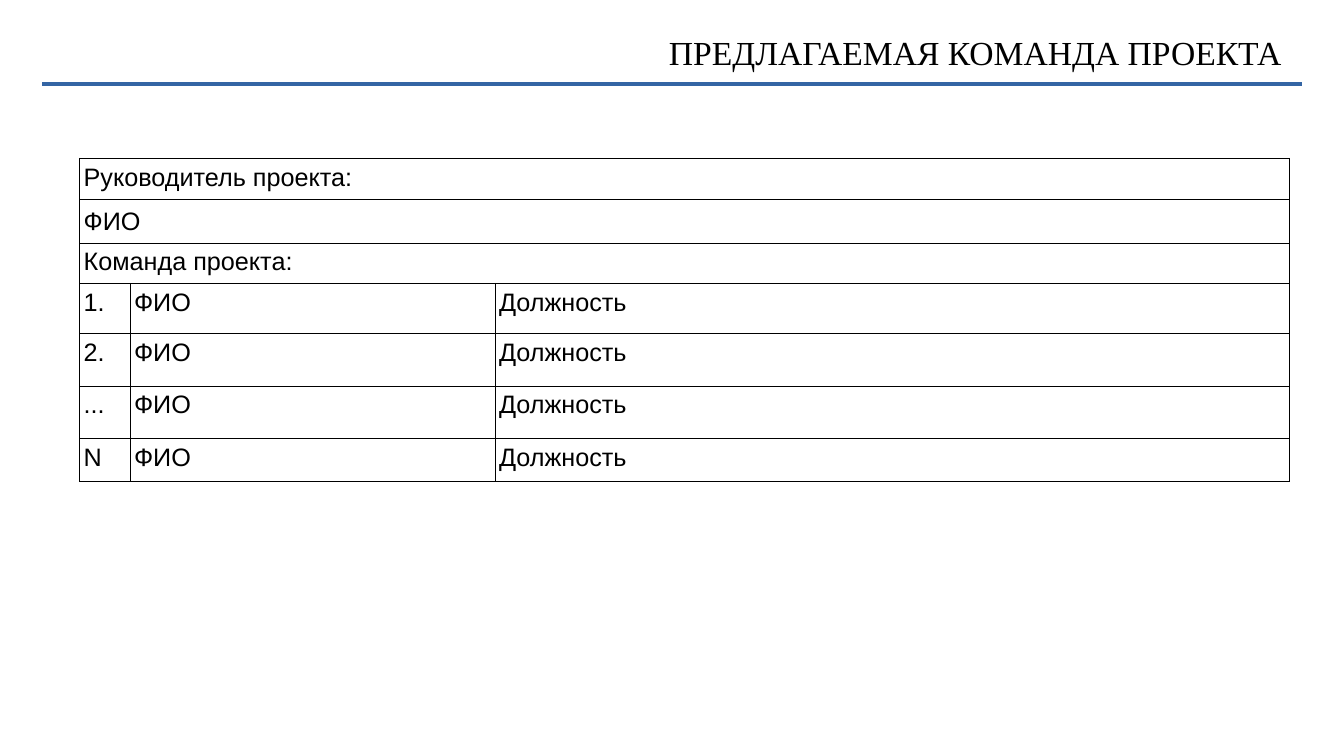
from lxml import etree
from pptx import Presentation
from pptx.dml.color import RGBColor
from pptx.enum.shapes import MSO_CONNECTOR
from pptx.enum.text import MSO_ANCHOR, PP_ALIGN
from pptx.oxml.ns import qn
from pptx.util import Inches, Pt

LEFT, RIGHT, JUSTIFY = PP_ALIGN.LEFT, PP_ALIGN.RIGHT, PP_ALIGN.JUSTIFY
TOP, MIDDLE = MSO_ANCHOR.TOP, MSO_ANCHOR.MIDDLE
STRAIGHT = MSO_CONNECTOR.STRAIGHT
COLORS = {"text": "000000", "border": "000000", "rule": "3465A4"}
BORDER_WIDTH = Pt(0.57)


def write_text(frame, text, font="Arial", size=18, align=LEFT):
    paragraph = frame.paragraphs[0]
    paragraph.alignment = align
    run = paragraph.add_run()
    run.text = text
    run.font.name = font
    run.font.size = Pt(size)
    run.font.color.rgb = RGBColor.from_string(COLORS["text"])


def add_borders(cell):
    properties = cell._tc.get_or_add_tcPr()
    for position, side in enumerate(("a:lnL", "a:lnR", "a:lnT", "a:lnB")):
        line = etree.Element(qn(side), w=str(BORDER_WIDTH))
        fill = etree.SubElement(line, qn("a:solidFill"))
        etree.SubElement(fill, qn("a:srgbClr"), val=COLORS["border"])
        properties.insert(position, line)


presentation = Presentation()
presentation.slide_width = Inches(13.33)
presentation.slide_height = Inches(7.5)
slide = presentation.slides.add_slide(presentation.slide_layouts[6])

# Heading with its rule
rule = slide.shapes.add_connector(
    STRAIGHT, Inches(0.42), Inches(0.83), Inches(12.91), Inches(0.83)
)
rule.line.color.rgb = RGBColor.from_string(COLORS["rule"])
rule.line.width = Pt(3)
etree.SubElement(rule._element.spPr, qn("a:effectLst"))

title = slide.shapes.add_textbox(Inches(0.71), Inches(0), Inches(12), Inches(1.04))
title_frame = title.text_frame
title_frame.word_wrap = True
title_frame.vertical_anchor = MIDDLE
title_frame.margin_left = title_frame.margin_right = Inches(0)
title_frame.margin_top = title_frame.margin_bottom = Inches(0)
write_text(title_frame, "ПРЕДЛАГАЕМАЯ КОМАНДА ПРОЕКТА",
           font="Times New Roman", size=24, align=RIGHT)

# Team table: three full-width rows, then one row per member
column_widths = [0.5, 3.62, 7.88]
row_heights = [0.41, 0.43, 0.38, 0.5, 0.52, 0.52, 0.43]
full_rows = [
    ("Руководитель проекта:", LEFT, TOP),
    ("ФИО", LEFT, MIDDLE),
    ("Команда проекта:", JUSTIFY, TOP),
]
member_numbers = ["1.", "2.", "...", "N"]

table = slide.shapes.add_table(
    len(row_heights), len(column_widths), Inches(0.79), Inches(1.57),
    Inches(sum(column_widths)), Inches(sum(row_heights)),
).table
table.first_row = False
table.horz_banding = False
for column, width in zip(table.columns, column_widths):
    column.width = Inches(width)
for row, height in zip(table.rows, row_heights):
    row.height = Inches(height)

for cell in table.iter_cells():
    cell.fill.background()
    cell.margin_left = cell.margin_right = Inches(0.04)
    cell.margin_top = cell.margin_bottom = Inches(0.05)
    add_borders(cell)

for row_index, (text, align, anchor) in enumerate(full_rows):
    cell = table.cell(row_index, 0)
    cell.merge(table.cell(row_index, len(column_widths) - 1))
    cell.vertical_anchor = anchor
    write_text(cell.text_frame, text, align=align)

for row_index, number in enumerate(member_numbers, start=len(full_rows)):
    member = [(number, LEFT), ("ФИО", LEFT), ("Должность", JUSTIFY)]
    for column_index, (text, align) in enumerate(member):
        write_text(table.cell(row_index, column_index).text_frame, text, align=align)

presentation.save("out.pptx")
